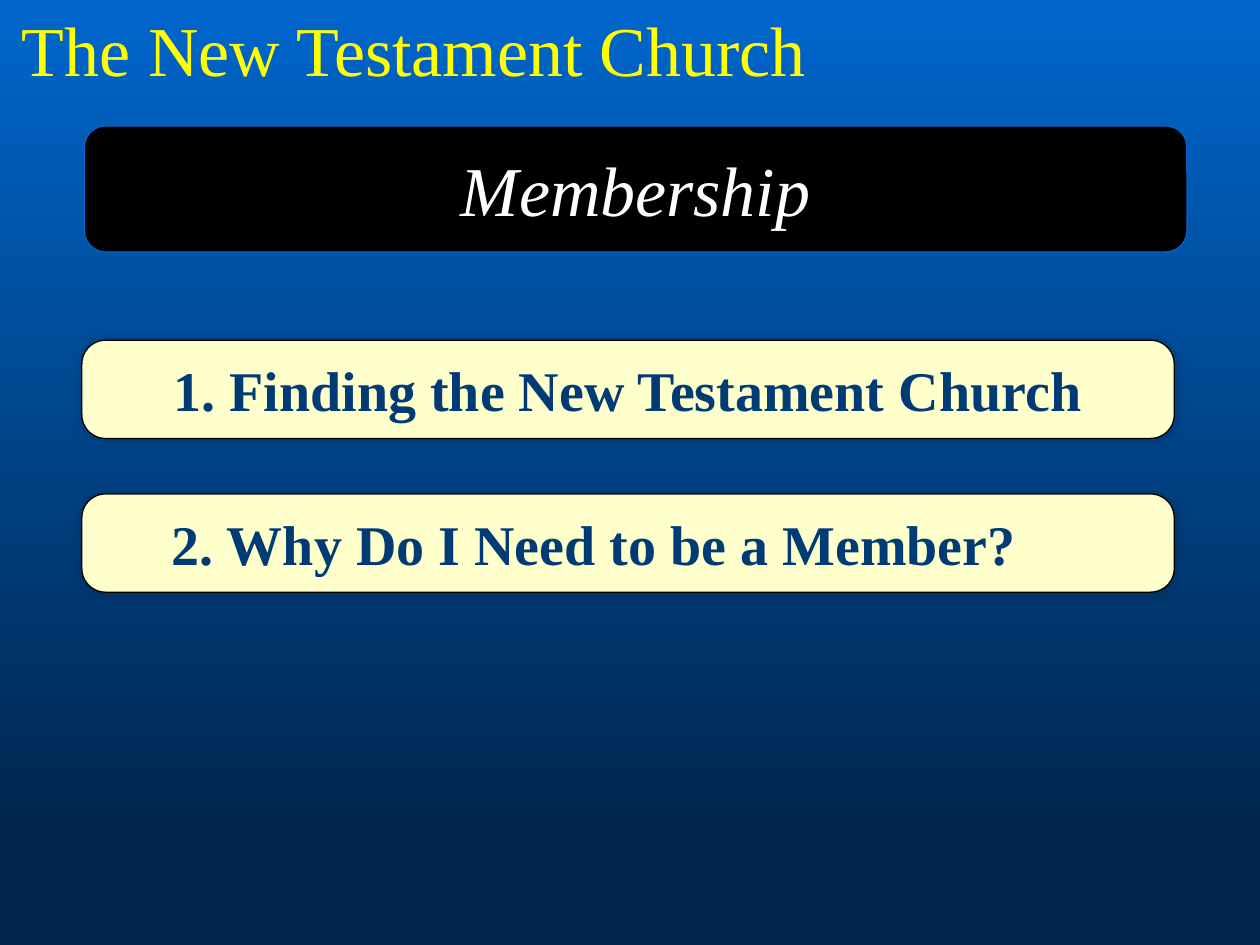
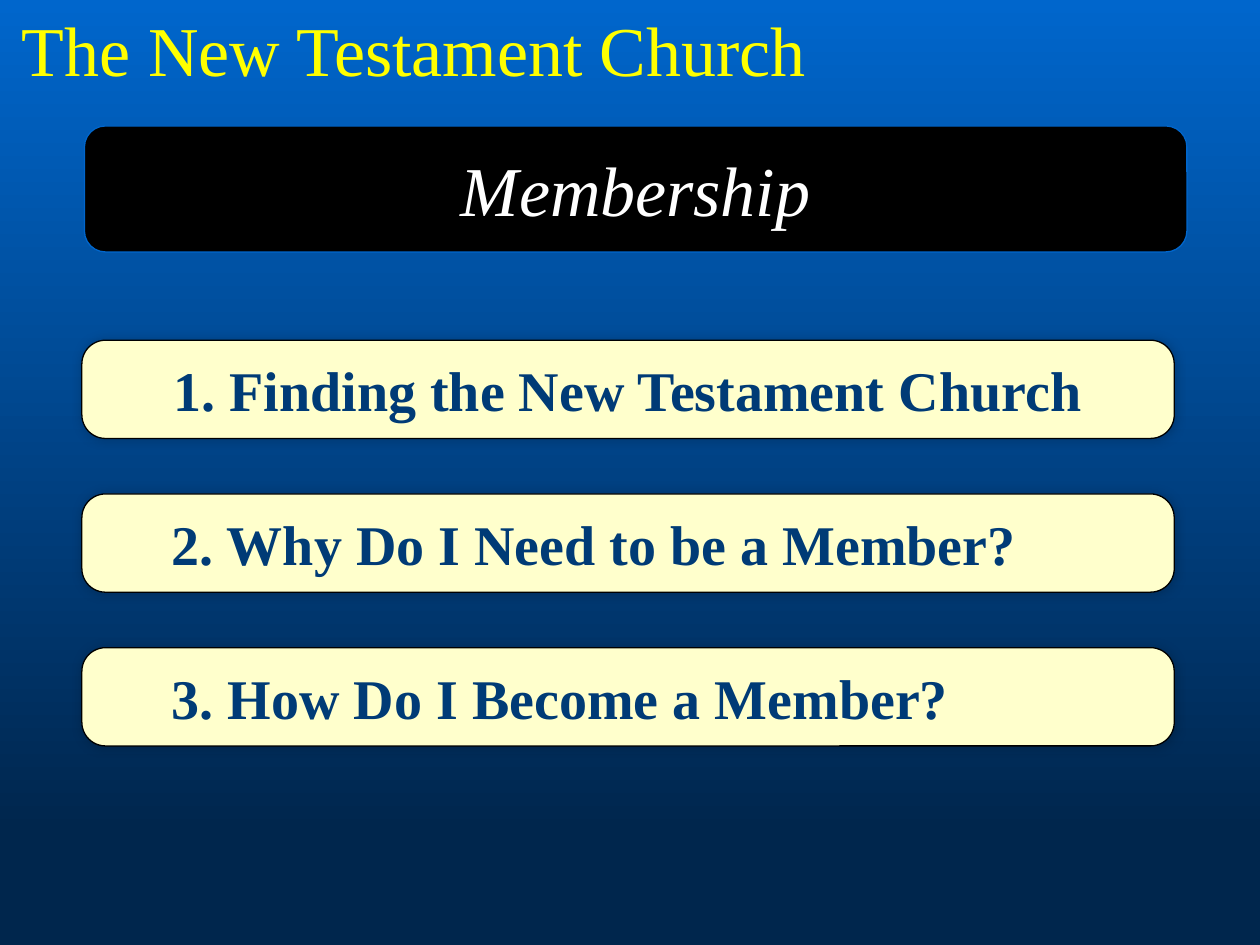
from dataclasses import dataclass

from pptx import Presentation
from pptx import util as u
from pptx.dml.color import RGBColor
from pptx.enum import shapes, text
from pptx.oxml import ns
from lxml import etree


@dataclass(frozen=True)
class Theme:
    font: str = "Times New Roman"
    sky: str = "0066CC"
    deep: str = "00264D"
    title: str = "FFFF00"
    banner: str = "000000"
    banner_text: str = "FFFFFF"
    card: str = "FFFFCC"
    card_text: str = "003B76"
    border: str = "000000"
    heading_size: int = 40
    card_size: int = 32
    line_width: float = 0.75


THEME = Theme()
CARD_TOP, CARD_STEP = 2.7, 1.22
CARD_INDENT = 0.56
TOPICS = [
    ("1. Finding the New Testament Church", text.PP_ALIGN.CENTER),
    ("2. Why Do I Need to be a Member?", text.PP_ALIGN.LEFT),
    ("3. How Do I Become a Member?", text.PP_ALIGN.LEFT),
]


def rgb(value):
    return RGBColor.from_string(value)


def add_child(parent, tag, **attributes):
    return etree.SubElement(parent, ns.qn(tag), attributes)


def write(shape, words, *, size, color, bold=False, italic=False,
          align=text.PP_ALIGN.CENTER, anchor=text.MSO_ANCHOR.MIDDLE):
    frame = shape.text_frame
    frame.word_wrap = True
    frame.vertical_anchor = anchor
    para = frame.paragraphs[0]
    para.alignment = align
    span = para.add_run()
    span.text = words
    font = span.font
    font.name, font.size = THEME.font, u.Pt(size)
    font.bold, font.italic = bold, italic
    font.color.rgb = rgb(color)
    return span


def outline_text(span, color):
    properties = span.font._element
    line = etree.Element(ns.qn("a:ln"), w=str(u.Pt(THEME.line_width)))
    add_child(add_child(line, "a:solidFill"), "a:srgbClr", val=color)
    properties.insert(0, line)


def add_glow_shadow(shape):
    effects = shape._element.spPr.find(ns.qn("a:effectLst"))
    shadow = add_child(effects, "a:outerShdw", blurRad=str(u.Pt(6)), dist="0",
                       dir=str(225 * 60000), algn="ctr", rotWithShape="0")
    color = add_child(shadow, "a:srgbClr", val="000000")
    add_child(color, "a:alpha", val="20000")


def add_round_box(page, left, top, width, height, *, fill, line):
    box = page.shapes.add_shape(
        shapes.MSO_SHAPE.ROUNDED_RECTANGLE,
        u.Inches(left), u.Inches(top), u.Inches(width), u.Inches(height))
    box.shadow.inherit = False
    box.fill.solid()
    box.fill.fore_color.rgb = rgb(fill)
    box.line.color.rgb = rgb(line)
    box.line.width = u.Pt(THEME.line_width)
    return box


def paint_background(page):
    fill = page.background.fill
    fill.gradient()
    fill.gradient_angle = 270
    stops = ((0, THEME.sky), (0.88, THEME.deep))
    for stop, (position, color) in zip(fill.gradient_stops, stops):
        stop.position = position
        stop.color.rgb = rgb(color)


def add_title(page, words):
    box = page.shapes.add_textbox(
        u.Inches(0.04), 0, u.Inches(6.49), u.Inches(0.77))
    span = write(box, words, size=THEME.heading_size, color=THEME.title,
                 anchor=text.MSO_ANCHOR.TOP)
    outline_text(span, THEME.sky)


def add_banner(page, words):
    box = add_round_box(page, 0.67, 1, 8.75, 1, fill=THEME.banner, line=THEME.sky)
    write(box, words, size=THEME.heading_size, color=THEME.banner_text, italic=True)


def add_topic_card(page, index, words, align):
    box = add_round_box(page, 0.65, CARD_TOP + index * CARD_STEP, 8.67, 0.78,
                        fill=THEME.card, line=THEME.border)
    box.adjustments[0] = 0.241
    add_glow_shadow(box)
    write(box, words, size=THEME.card_size, color=THEME.card_text,
          bold=True, align=align)
    if align == text.PP_ALIGN.LEFT:
        box.text_frame.margin_left = u.Inches(0.1 + CARD_INDENT)


def add_topics_page(deck, count):
    page = deck.slides.add_slide(deck.slide_layouts[6])
    paint_background(page)
    add_title(page, "The New Testament Church")
    add_banner(page, "Membership")
    for index, (words, align) in enumerate(TOPICS[:count]):
        add_topic_card(page, index, words, align)


def main():
    deck = Presentation()
    deck.slide_width, deck.slide_height = u.Inches(10), u.Inches(7.5)
    for count in (2, 3):
        add_topics_page(deck, count)
    deck.save("out.pptx")


if __name__ == "__main__":
    main()
